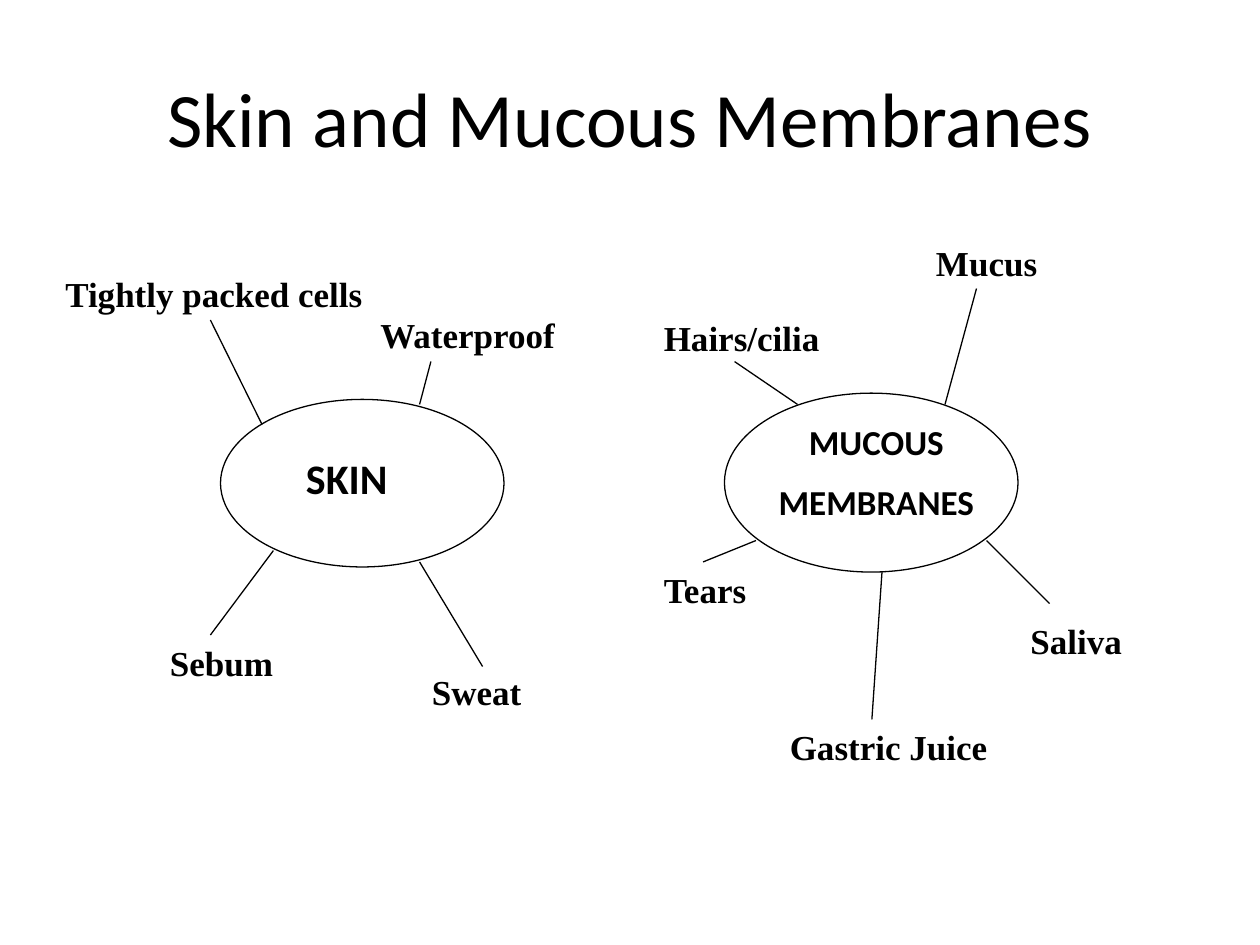
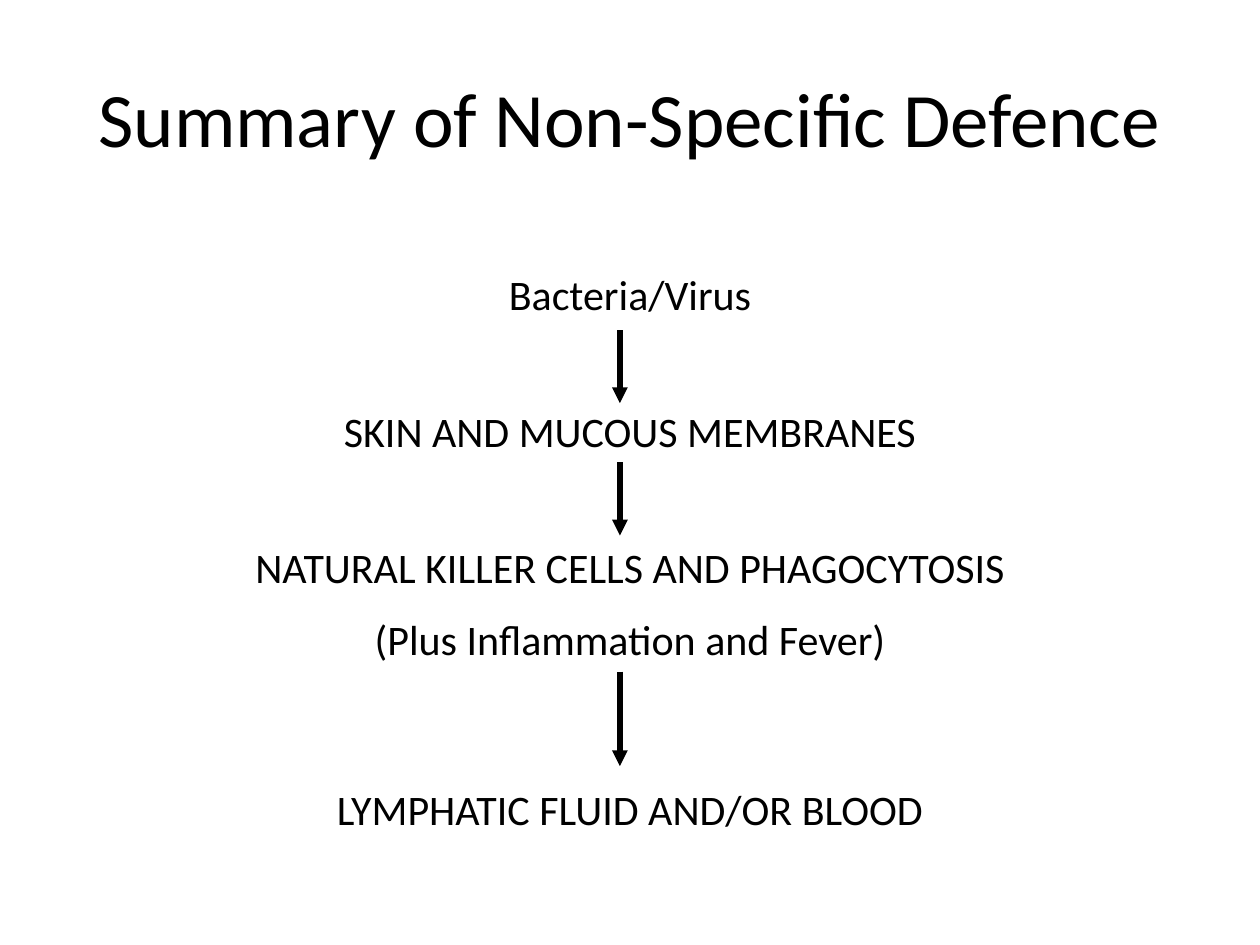
from lxml import etree
from pptx import Presentation
from pptx.dml.color import RGBColor
from pptx.enum.shapes import MSO_CONNECTOR, MSO_SHAPE
from pptx.enum.text import MSO_ANCHOR, PP_ALIGN
from pptx.oxml.ns import qn
from pptx.util import Inches, Pt

BLACK = RGBColor.from_string("000000")
SANS, SERIF = "Calibri", "Times New Roman"


def write(frame, lines, size, face=SANS, bold=False, align=PP_ALIGN.CENTER):
    """Fill a text frame, one paragraph a line, half a line size apart."""
    frame.word_wrap = True
    frame.text = "\n".join(lines)
    for i, para in enumerate(frame.paragraphs):
        para.alignment = align
        para.space_before = Pt(size / 2 if i else 0)
        font = para.font
        font.name, font.size, font.bold = face, Pt(size), bold
        font.color.rgb = BLACK


def link(slide, start, end, width=0.75, arrow=False):
    """Draw a plain black line, with an arrowhead at its end if asked."""
    ends = [Inches(v) for v in (*start, *end)]
    line = slide.shapes.add_connector(MSO_CONNECTOR.STRAIGHT, *ends)
    line.line.color.rgb = BLACK
    line.line.width = Pt(width)
    props = line._element.spPr
    if arrow:
        etree.SubElement(props.find(qn("a:ln")), qn("a:tailEnd"), type="triangle")
    etree.SubElement(props, qn("a:effectLst"))


deck = Presentation()
deck.slide_width, deck.slide_height = Inches(10), Inches(7.5)

slides = []
for name in ("Skin and Mucous Membranes", "Summary of Non-Specific Defence"):
    slide = deck.slides.add_slide(deck.slide_layouts[5])
    title = slide.shapes.title
    title.left, title.top = Inches(0.5), Inches(0.3)
    title.width, title.height = Inches(9), Inches(1.25)
    write(title.text_frame, [name], 44)
    title.text_frame.vertical_anchor = MSO_ANCHOR.MIDDLE
    slides.append(slide)
web, flow = slides

# Two hubs: oval box, label box, label lines, size, alignment
hubs = [
    ((1.75, 3.17, 2.25, 1.33), (2.33, 3.54, 1.5, 0.5),
     ["SKIN"], 24, PP_ALIGN.LEFT),
    ((5.75, 3.12, 2.33, 1.42), (5.83, 3.29, 2.25, 0.93),
     ["MUCOUS", "MEMBRANES"], 20, PP_ALIGN.CENTER),
]
for oval, label, lines, size, align in hubs:
    hub = web.shapes.add_shape(MSO_SHAPE.OVAL, *[Inches(v) for v in oval])
    hub.shadow.inherit = False
    hub.fill.background()
    hub.line.color.rgb = BLACK
    hub.line.width = Pt(0.75)
    box = web.shapes.add_textbox(*[Inches(v) for v in label])
    write(box.text_frame, lines, size, bold=True, align=align)

# Spokes: text, its left, top and width, then the line from hub to text
spokes = [
    ("Tightly packed cells", 0.42, 2.11, 2.67, (2.08, 3.37), (1.67, 2.54)),
    ("Waterproof", 2.92, 2.44, 1.83, (3.33, 3.21), (3.42, 2.87)),
    ("Hairs/cilia", 5.17, 2.46, 1.83, (6.33, 3.21), (5.83, 2.87)),
    ("Mucus", 7.33, 1.87, 1.25, (7.5, 3.21), (7.75, 2.29)),
    ("Sebum", 1.25, 5.04, 1.33, (2.17, 4.37), (1.67, 5.04)),
    ("Sweat", 3.33, 5.27, 1.67, (3.33, 4.46), (3.83, 5.29)),
    ("Tears", 5.17, 4.46, 1.08, (6, 4.29), (5.58, 4.46)),
    ("Gastric Juice", 6.17, 5.71, 1.83, (7, 4.54), (6.92, 5.71)),
    ("Saliva", 8.08, 4.87, 1.42, (7.83, 4.29), (8.33, 4.79)),
]
for text, left, top, width, start, end in spokes:
    link(web, start, end)
    box = web.shapes.add_textbox(Inches(left), Inches(top), Inches(width), Inches(0.43))
    write(box.text_frame, [text], 20, SERIF, True, PP_ALIGN.LEFT)

# Stages of defence, centred on the slide: top, width, height, lines
stages = [
    (2.08, 4.42, 0.5, ["Bacteria/Virus"]),
    (3.17, 5.5, 0.5, ["SKIN AND MUCOUS MEMBRANES"]),
    (4.25, 7.92, 1.11, ["NATURAL KILLER CELLS AND PHAGOCYTOSIS",
                        "(Plus Inflammation and Fever)"]),
    (6.17, 6.67, 0.5, ["LYMPHATIC FLUID AND/OR BLOOD"]),
]
for top, width, height, lines in stages:
    box = flow.shapes.add_textbox(Inches(5 - width / 2), Inches(top),
                                  Inches(width), Inches(height))
    write(box.text_frame, lines, 24)

for top, foot in ((2.62, 3.2), (3.67, 4.25), (5.33, 6.08)):
    link(flow, (4.92, top), (4.92, foot), 3, True)

deck.save("out.pptx")
